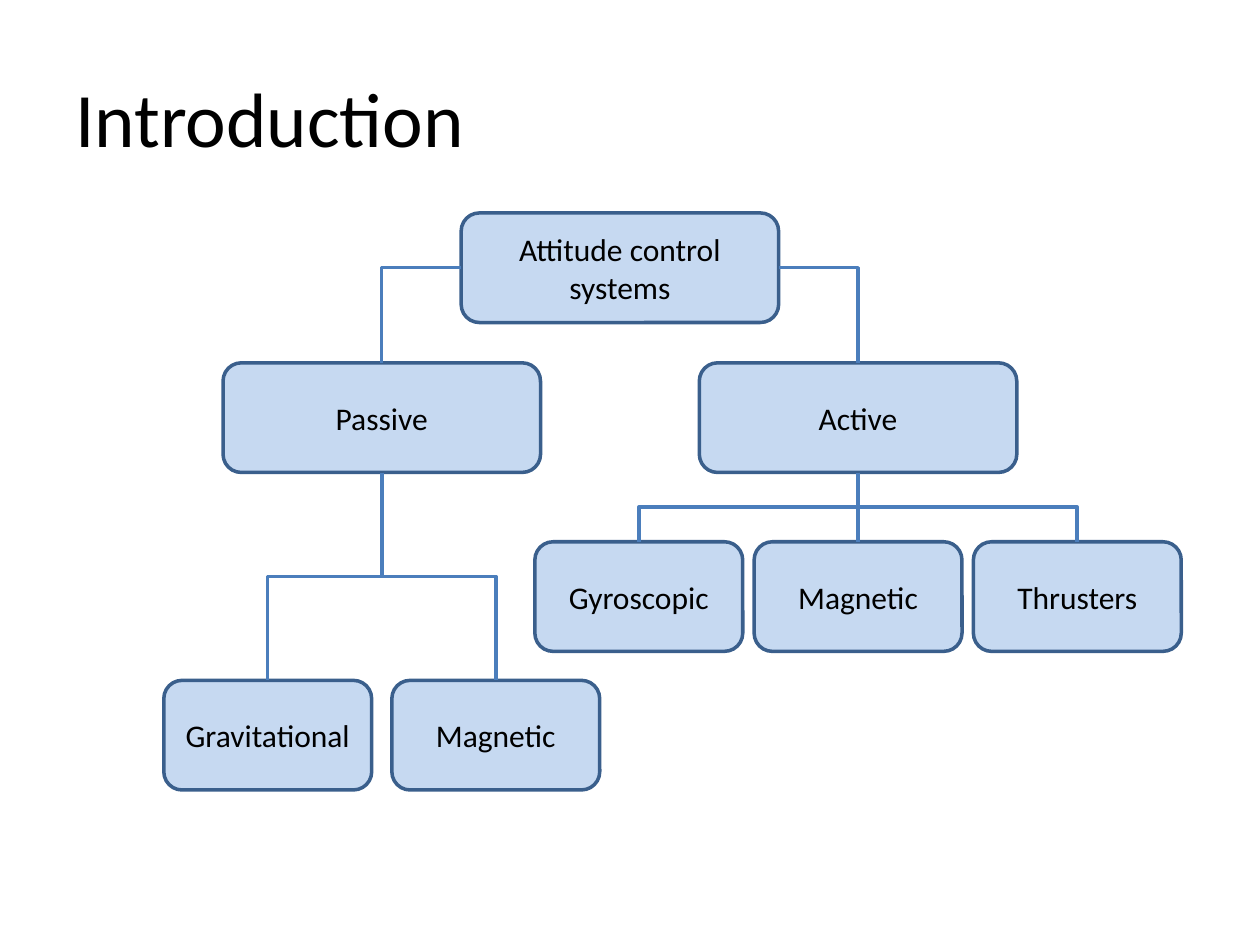
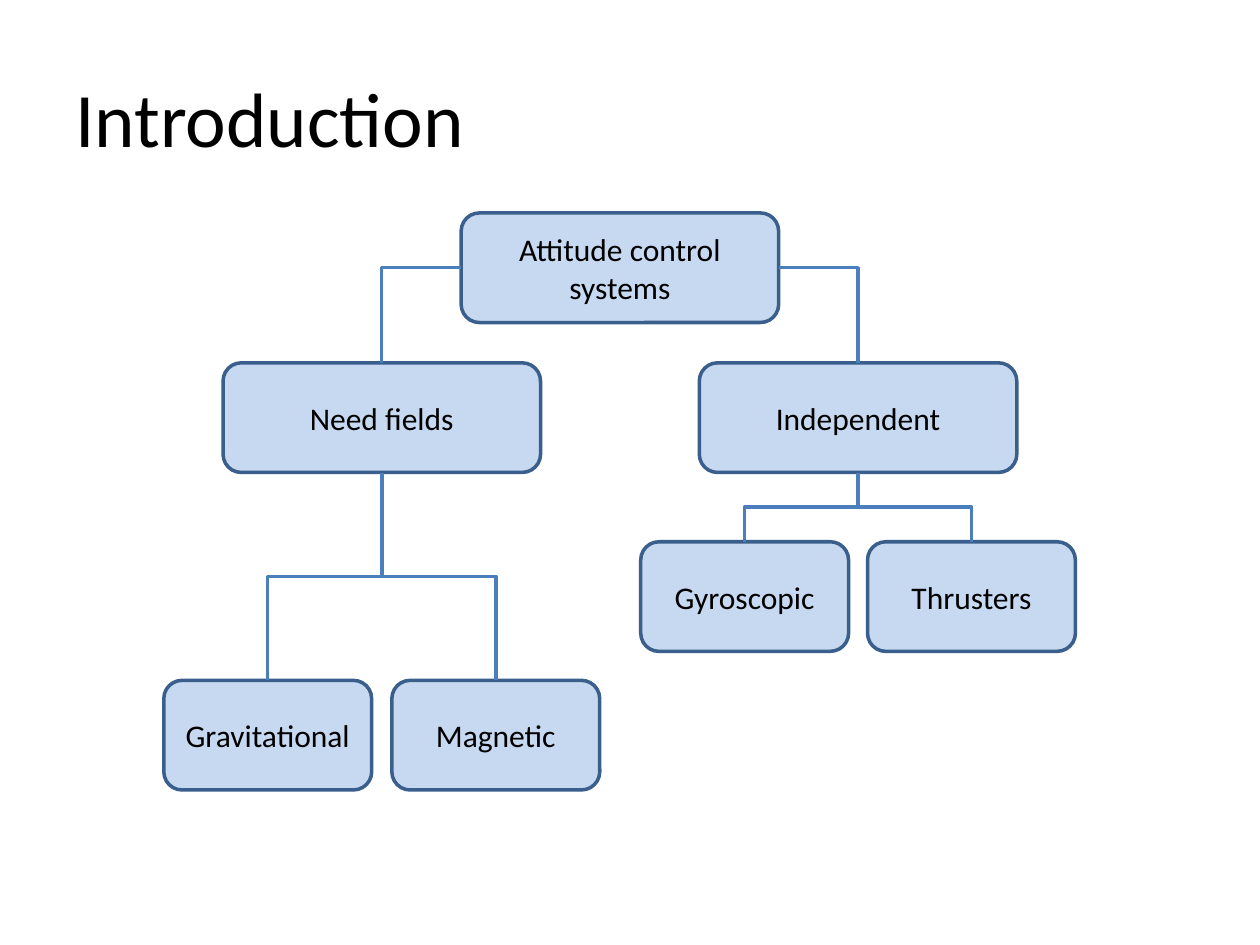
from dataclasses import dataclass

from lxml import etree
from pptx import Presentation
from pptx import util as u
from pptx.dml.color import RGBColor
from pptx.enum import shapes, text
from pptx.oxml.ns import qn


@dataclass(frozen=True)
class Theme:
    font: str = "Calibri"
    ink: RGBColor = RGBColor.from_string("000000")
    node_fill: RGBColor = RGBColor.from_string("C6D9F1")
    node_line: RGBColor = RGBColor.from_string("3A5F8C")
    link: RGBColor = RGBColor.from_string("4B7EBC")
    line_width: u.Pt = u.Pt(2)
    title_size: u.Pt = u.Pt(44)
    node_size: u.Pt = u.Pt(18)


@dataclass(frozen=True)
class Box:
    left: float
    top: float
    width: float
    height: float

    def lengths(self):
        return [u.Inches(v) for v in (self.left, self.top, self.width, self.height)]


@dataclass(frozen=True)
class Branch:
    """A second-level node; drop and gap place its row of leaves."""
    label: str
    leaves: tuple
    drop: float
    gap: float


THEME = Theme()
TITLE_BOX = Box(0.5, 0.3, 9, 1.25)
TREE_BOX = Box(1.77, 1.69, 6.3, 4.58)
NODE_WIDTH, LEAF_WIDTH, NODE_HEIGHT = 2.52, 1.65, 0.87
BRANCH_OFFSET = 1.19
TOP, LEFT, BOTTOM, RIGHT = range(4)

FIELD_LEAVES = ("Gravitational", "Magnetic")
SLIDES = [
    (Branch("Passive", FIELD_LEAVES, 1.65, 0.16),
     Branch("Active", ("Gyroscopic", "Magnetic", "Thrusters"), 0.55, 0.09)),
    (Branch("Need fields", FIELD_LEAVES, 1.65, 0.16),
     Branch("Independent", ("Gyroscopic", "Thrusters"), 0.55, 0.15)),
]


def write(sp, words, size, align):
    tf = sp.text_frame
    tf.word_wrap = True
    tf.vertical_anchor = text.MSO_ANCHOR.MIDDLE
    tf.text = words
    p = tf.paragraphs[0]
    p.alignment = align
    font = p.runs[0].font
    font.name, font.size = THEME.font, size
    font.color.rgb = THEME.ink


def add_title(s, box, words):
    sp = s.shapes.add_textbox(*box.lengths())
    write(sp, words, THEME.title_size, text.PP_ALIGN.LEFT)


def add_node(s, box, label):
    sp = s.shapes.add_shape(shapes.MSO_SHAPE.ROUNDED_RECTANGLE, *box.lengths())
    sp.shadow.inherit = False
    sp.fill.solid()
    sp.fill.fore_color.rgb = THEME.node_fill
    sp.line.color.rgb = THEME.node_line
    sp.line.width = THEME.line_width
    write(sp, label, THEME.node_size, text.PP_ALIGN.CENTER)
    return sp


def add_link(s, kind, start, start_side, end):
    """Join a side of start to the top of end."""
    cx = s.shapes.add_connector(kind, 0, 0, 0, 0)
    cx.begin_connect(start, start_side)
    cx.end_connect(end, TOP)
    cx.line.color.rgb = THEME.link
    cx.line.width = THEME.line_width
    etree.SubElement(cx._element.spPr, qn("a:effectLst"))
    return cx


def link_corner(s, root, side, branch):
    """One bend: sideways out of the root, then down."""
    cx = add_link(s, shapes.MSO_CONNECTOR.ELBOW, root, side, branch)
    cx._element.spPr.find(qn("a:prstGeom")).set("prst", "bentConnector2")


def link_down(s, parent, leaf):
    """Down, across at half height and down again; straight if aligned."""
    dx = leaf.left + leaf.width // 2 - parent.left - parent.width // 2
    if abs(dx) < u.Inches(0.01):
        add_link(s, shapes.MSO_CONNECTOR.STRAIGHT, parent, BOTTOM, leaf)
        return
    cx = add_link(s, shapes.MSO_CONNECTOR.ELBOW, parent, BOTTOM, leaf)
    across, down = cx.width, cx.height
    # The preset leaves sideways, so turn it a quarter about its centre.
    cx.left += (across - down) // 2
    cx.top += (down - across) // 2
    cx.width, cx.height = down, across
    xfrm = cx._element.spPr.find(qn("a:xfrm"))
    xfrm.set("rot", str((270 if dx > 0 else 90) * 60000))
    xfrm.set("flipH", "1" if dx > 0 else "0")


def add_branch(s, box, branch):
    """Draw the branch node in box, with its leaves centred below."""
    parent = add_node(s, box, branch.label)
    pitch = LEAF_WIDTH + branch.gap
    row_width = len(branch.leaves) * pitch - branch.gap
    left = box.left + (box.width - row_width) / 2
    top = box.top + box.height + branch.drop
    for i, label in enumerate(branch.leaves):
        leaf_box = Box(left + i * pitch, top, LEAF_WIDTH, NODE_HEIGHT)
        link_down(s, parent, add_node(s, leaf_box, label))
    return parent


def add_tree(s, box, root_label, branches):
    spare = box.width - NODE_WIDTH
    root_box = Box(box.left + spare / 2, box.top, NODE_WIDTH, NODE_HEIGHT)
    root = add_node(s, root_box, root_label)
    for branch, side, left in zip(branches, (LEFT, RIGHT), (box.left, box.left + spare)):
        branch_box = Box(left, box.top + BRANCH_OFFSET, NODE_WIDTH, NODE_HEIGHT)
        link_corner(s, root, side, add_branch(s, branch_box, branch))


def main():
    prs = Presentation()
    prs.slide_width, prs.slide_height = u.Inches(10), u.Inches(7.5)
    for branches in SLIDES:
        s = prs.slides.add_slide(prs.slide_layouts[6])
        add_title(s, TITLE_BOX, "Introduction")
        add_tree(s, TREE_BOX, "Attitude control systems", branches)
    prs.save("out.pptx")


if __name__ == "__main__":
    main()
